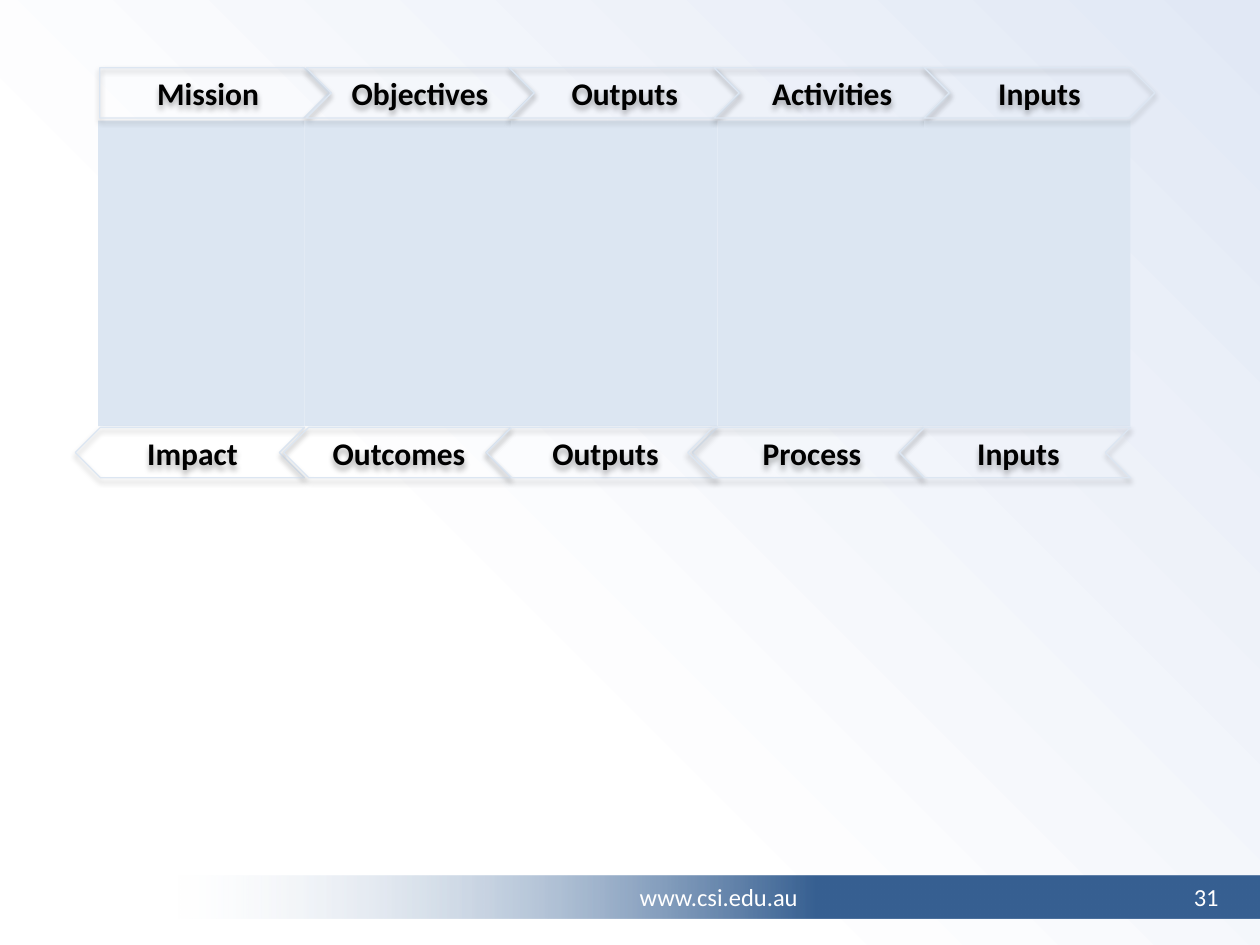
from lxml.etree import SubElement
from pptx import Presentation
from pptx.dml.color import RGBColor
from pptx.enum.shapes import MSO_SHAPE as SHAPE
from pptx.enum.text import MSO_ANCHOR as ANCHOR, PP_ALIGN as ALIGN
from pptx.oxml import parse_xml
from pptx.oxml.ns import nsdecls, qn
from pptx.util import Pt

COLORS = {"panel": "DCE6F2", "bar": "376092", "sky": "E1E8F5",
          "white": "FFFFFF", "black": "000000"}
FONT = "Calibri"
STEPS = [
    ("Mission", "Impact", 57, 131),
    ("Objectives", "Outcomes", 175, 130),
    ("Outputs", "Outputs", 291, 132),
    ("Activities", "Process", 408, 135),
    ("Inputs", "Inputs", 528, 132),
]
FOOTER, PAGE = "www.csi.edu.au", "31"
LEFT, COL_W = 56, 118
PANEL_TOP, PANEL_H = 69, 174.5
TOP_Y, BOTTOM_Y, ARROW_H = 38.7, 244.2, 28.8
FOOT_Y, FOOT_H = 500.4, 24.5


def rgb(name):
    return RGBColor.from_string(COLORS[name])


def gradient(stops, direction):
    gs = "".join(
        f'<a:gs pos="{pos * 1000}"><a:srgbClr val="{COLORS[name]}">'
        f'<a:alpha val="{alpha * 1000}"/></a:srgbClr></a:gs>'
        for pos, name, alpha in stops)
    return parse_xml(f'<a:gradFill {nsdecls("a")} rotWithShape="1">'
                     f'<a:gsLst>{gs}</a:gsLst>{direction}</a:gradFill>')


def replace_fill(fill, new):
    fill.solid()
    old = fill._xPr.find(qn("a:solidFill"))
    fill._xPr.replace(old, new)


def add_shadow(s):
    effects = s._element.spPr.get_or_add_effectLst() if hasattr(
        s._element.spPr, "get_or_add_effectLst") else SubElement(
        s._element.spPr, qn("a:effectLst"))
    shadow = SubElement(effects, qn("a:outerShdw"), blurRad=str(Pt(3.5)),
                        dist=str(Pt(2.2)), dir="5400000", rotWithShape="0")
    color = SubElement(shadow, qn("a:srgbClr"), val=COLORS["black"])
    SubElement(color, qn("a:alpha"), val="32000")


def add_shape(kind, x, y, w, h):
    s = slide.shapes.add_shape(kind, Pt(x), Pt(y), Pt(w), Pt(h))
    s.shadow.inherit = False
    s.line.fill.background()
    return s


def add_panel(x):
    s = add_shape(SHAPE.RECTANGLE, x, PANEL_TOP, COL_W, PANEL_H)
    s.fill.solid()
    s.fill.fore_color.rgb = rgb("panel")


def add_arrow(kind, x, y, w):
    s = add_shape(kind, x, y, w, ARROW_H)
    s.fill.background()
    s.line.color.rgb = rgb("panel")
    s.line.width = Pt(0.75)
    add_shadow(s)
    return s


def add_box(x, y, w, h):
    return slide.shapes.add_textbox(Pt(x), Pt(y), Pt(w), Pt(h))


def write(s, text, size, color, bold=False, align=ALIGN.CENTER):
    tf = s.text_frame
    tf.word_wrap = True
    tf.vertical_anchor = ANCHOR.MIDDLE
    p = tf.paragraphs[0]
    p.alignment = align
    r = p.add_run()
    r.text = text
    r.font.name, r.font.size, r.font.bold = FONT, Pt(size), bold
    r.font.color.rgb = rgb(color)


prs = Presentation()
prs.slide_width, prs.slide_height = Pt(720), Pt(540)
slide = prs.slides.add_slide(prs.slide_layouts[6])
replace_fill(slide.background.fill, gradient(
    [(35, "white", 100), (100, "sky", 100)],
    '<a:path path="circle"><a:fillToRect t="100000" r="100000"/></a:path>'))

bar = add_shape(SHAPE.RECTANGLE, 101.5, FOOT_Y, 618.5, FOOT_H)
replace_fill(bar.fill, gradient(
    [(0, "panel", 0), (59, "bar", 100)], '<a:lin ang="0" scaled="0"/>'))
write(bar, FOOTER, 14, "white")
write(add_box(664, FOOT_Y, 39.5, FOOT_H), PAGE, 14, "white", align=ALIGN.RIGHT)

for i, (plan, result, x, w) in enumerate(STEPS):
    col = LEFT + i * COL_W
    add_panel(col)
    back = add_arrow(SHAPE.CHEVRON, col + COL_W - w, BOTTOM_Y, w)
    back.rotation = 180
    label = add_box(col - 5, BOTTOM_Y + 0.5, COL_W, ARROW_H)
    add_shadow(label)
    write(label, result, 18, "black", True)
    kind = SHAPE.CHEVRON if i else SHAPE.PENTAGON
    write(add_arrow(kind, x, TOP_Y, w), plan, 18, "black", True)

prs.save("out.pptx")
